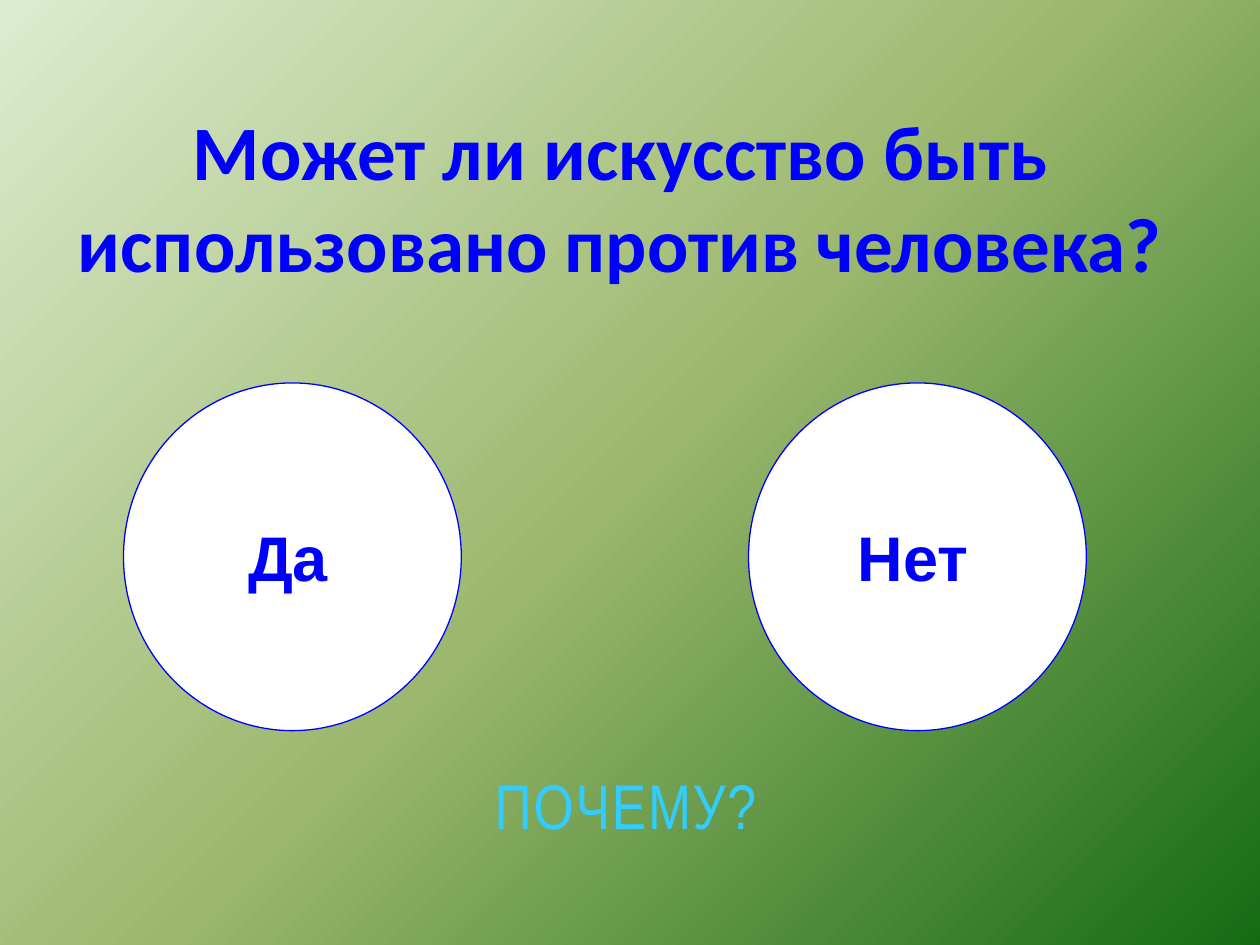
import pptx
import pptx.util
import pptx.dml.color
import pptx.enum.shapes
import pptx.enum.text
import pptx.oxml
from pptx.oxml.ns import qn
from pptx.util import Cm

# Content
QUESTION = "Может ли искусство быть использовано против человека?"
ANSWERS = ["Да", "Нет"]
FOLLOW_UP = "П О Ч Е М У ?"
BACKGROUND_STOPS = [(0, "DDEBCF"), (50, "9CB86E"), (100, "156B13")]
BLUE, WHITE, BLACK, CYAN = "0000FF", "FFFFFF", "000000", "33CCFF"
NAVY, SHADOW = "000099", "EEECE1"

# Layout in centimetres
ANSWER_LEFT, ANSWER_TOP, ANSWER_STEP = 2.49, 7.72, 12.6
ANSWER_WIDTH, ANSWER_HEIGHT = 6.81, 7.01


def colour(value):
    return pptx.dml.color.RGBColor.from_string(value)


def drawing_xml(tag, attributes, inner):
    space = "http://schemas.openxmlformats.org/drawingml/2006/main"
    return pptx.oxml.parse_xml(
        f'<a:{tag} xmlns:a="{space}" {attributes}>{inner}</a:{tag}>')


def solid(value):
    return f'<a:srgbClr val="{value}"/>'


def add_run(paragraph, text, size, face, value, bold=False):
    run = paragraph.add_run()
    run.text = text
    run.font.size = pptx.util.Pt(size)
    run.font.name = face
    run.font.bold = bold
    run.font.color.rgb = colour(value)
    return run.font._element.find(qn("a:rPr")) if run.font._element.tag == qn("a:r") else run._r.rPr


def centre(frame, wrap, anchor):
    frame.word_wrap = wrap
    frame.auto_size = pptx.enum.text.MSO_AUTO_SIZE.NONE
    frame.vertical_anchor = anchor
    paragraph = frame.paragraphs[0]
    paragraph.alignment = pptx.enum.text.PP_ALIGN.CENTER
    return paragraph


MIDDLE = pptx.enum.text.MSO_ANCHOR.MIDDLE
TOP = pptx.enum.text.MSO_ANCHOR.TOP

presentation = pptx.Presentation()
presentation.slide_width, presentation.slide_height = Cm(25.4), Cm(19.05)
slide = presentation.slides.add_slide(presentation.slide_layouts[5])

# Diagonal green background
background = slide.background.fill
background.gradient()
background.gradient_angle = 315
stops = slide._element.find(".//" + qn("a:gsLst"))
for stop in list(stops):
    stops.remove(stop)
for position, value in BACKGROUND_STOPS:
    stops.append(drawing_xml("gs", f'pos="{position * 1000}"', solid(value)))

# Question with a light text shadow
question = slide.shapes.title
question.left, question.top = Cm(0.89), Cm(0.76)
question.width, question.height = Cm(23.24), Cm(6.38)
properties = add_run(centre(question.text_frame, True, MIDDLE),
                     QUESTION, 44, "Calibri", BLUE, True)
properties.find(qn("a:solidFill")).addnext(drawing_xml(
    "effectLst", "",
    f'<a:outerShdw dist="35921" dir="2700000">{solid(SHADOW)}</a:outerShdw>'))

# Answer circles
for index, answer in enumerate(ANSWERS):
    circle = slide.shapes.add_shape(
        pptx.enum.shapes.MSO_SHAPE.OVAL,
        Cm(ANSWER_LEFT + index * ANSWER_STEP), Cm(ANSWER_TOP),
        Cm(ANSWER_WIDTH), Cm(ANSWER_HEIGHT))
    circle.shadow.inherit = False
    circle.fill.solid()
    circle.fill.fore_color.rgb = colour(WHITE)
    circle.line.color.rgb = colour(BLUE)
    circle.line.width = pptx.util.Pt(0.75)
    paragraph = centre(circle.text_frame, False, MIDDLE)
    add_run(paragraph, answer, 36, "Arial", BLUE, True)
    add_run(paragraph, " ", 18, "Arial", BLACK)

# Outlined follow-up question with tight letter spacing
follow_up = slide.shapes.add_textbox(Cm(6.91), Cm(15.32), Cm(11.4), Cm(1.83))
properties = add_run(centre(follow_up.text_frame, False, TOP),
                     FOLLOW_UP, 36, "Arial Narrow", CYAN)
properties.set("spc", "-360")
properties.insert(0, drawing_xml(
    "ln", 'w="12700"', f"<a:solidFill>{solid(NAVY)}</a:solidFill>"))

presentation.save("out.pptx")
